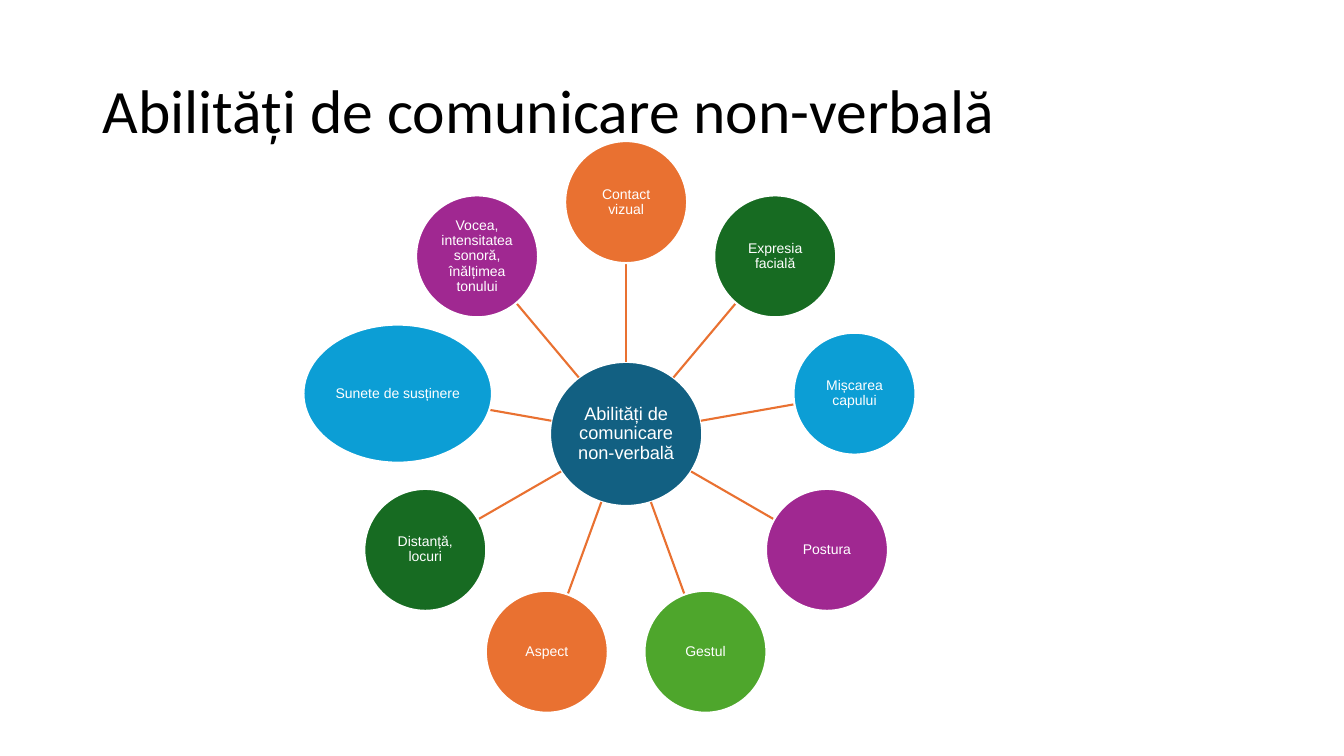
from math import cos, hypot, radians, sin

from lxml import etree
from pptx import Presentation
from pptx.dml.color import RGBColor
from pptx.enum.shapes import MSO_CONNECTOR, MSO_SHAPE
from pptx.enum.text import MSO_ANCHOR, PP_ALIGN
from pptx.oxml.ns import qn
from pptx.util import Inches, Pt

COLORS = {
    "white": "FFFFFF", "black": "000000", "navy": "126082", "orange": "E97131",
    "green": "176B22", "blue": "0C9ED5", "purple": "A02891", "lime": "4EA62C",
}
TITLE = "Abilități de comunicare non-verbală"
HUB_CENTER = (6.21, 4.305)
HUB_SIZE = (1.51, 1.43)
NODE_SIZE = (1.21, 1.21)
WIDE_SIZE = (1.87, 1.37)
ORBIT = 2.3
LINE_WIDTH = 1.5

# Clockwise from the top
NODES = [
    ("Contact vizual", "orange", NODE_SIZE),
    ("Expresia facială", "green", NODE_SIZE),
    ("Mișcarea capului", "blue", NODE_SIZE),
    ("Postura", "purple", NODE_SIZE),
    ("Gestul", "lime", NODE_SIZE),
    ("Aspect", "orange", NODE_SIZE),
    ("Distanță, locuri", "green", NODE_SIZE),
    ("Sunete de susținere", "blue", WIDE_SIZE),
    ("Vocea, intensitatea sonoră, înălțimea tonului", "purple", NODE_SIZE),
]


def rgb(name):
    return RGBColor.from_string(COLORS[name])


def write_text(sp, text, size, font, color, align, insets):
    tf = sp.text_frame
    settings = {
        "word_wrap": True, "vertical_anchor": MSO_ANCHOR.MIDDLE,
        "margin_left": Inches(insets[0]), "margin_right": Inches(insets[0]),
        "margin_top": Inches(insets[1]), "margin_bottom": Inches(insets[1]),
    }
    for name, value in settings.items():
        setattr(tf, name, value)
    p = tf.paragraphs[0]
    p.alignment = align
    p.line_spacing = 0.9
    r = p.add_run()
    r.text = text
    for name, value in {"name": font, "size": Pt(size)}.items():
        setattr(r.font, name, value)
    r.font.color.rgb = rgb(color)


def add_title(s):
    box = s.shapes.add_textbox(Inches(0.92), Inches(0.4), Inches(11.5), Inches(1.45))
    write_text(box, TITLE, 44, "Calibri", "black", PP_ALIGN.LEFT, (0.1, 0.05))


def add_bubble(s, center, size, color, text, font_size):
    (x, y), (w, h) = center, size
    sp = s.shapes.add_shape(MSO_SHAPE.OVAL, Inches(x - w / 2), Inches(y - h / 2),
                            Inches(w), Inches(h))
    sp.shadow.inherit = False
    sp.fill.solid()
    sp.fill.fore_color.rgb = rgb(color)
    sp.line.color.rgb = rgb("white")
    sp.line.width = Pt(LINE_WIDTH)
    write_text(sp, text, font_size, "Arial", "white", PP_ALIGN.CENTER, (0.01, 0.01))


def point_at(angle, distance):
    return (HUB_CENTER[0] + distance * cos(angle),
            HUB_CENTER[1] + distance * sin(angle))


def edge_distance(size, angle):
    """Distance from an ellipse's center to its edge along an angle."""
    return 1 / hypot(2 * cos(angle) / size[0], 2 * sin(angle) / size[1])


def add_spoke(s, angle, node_size):
    start = point_at(angle, edge_distance(HUB_SIZE, angle))
    end = point_at(angle, ORBIT - edge_distance(node_size, angle))
    line = s.shapes.add_connector(MSO_CONNECTOR.STRAIGHT,
                                  *[Inches(v) for v in start + end])
    line.line.color.rgb = rgb("orange")
    line.line.width = Pt(LINE_WIDTH)
    etree.SubElement(line._element.spPr, qn("a:effectLst"))


def main():
    prs = Presentation()
    prs.slide_width, prs.slide_height = Inches(13.33), Inches(7.5)
    s = prs.slides.add_slide(prs.slide_layouts[6])
    add_title(s)

    # Hub
    add_bubble(s, HUB_CENTER, HUB_SIZE, "navy", TITLE, 13)

    # Spokes and outer bubbles
    for i, (text, color, size) in enumerate(NODES):
        angle = radians(-90 + i * 360 / len(NODES))
        add_spoke(s, angle, size)
        add_bubble(s, point_at(angle, ORBIT), size, color, text, 10)

    prs.save("out.pptx")


if __name__ == "__main__":
    main()
